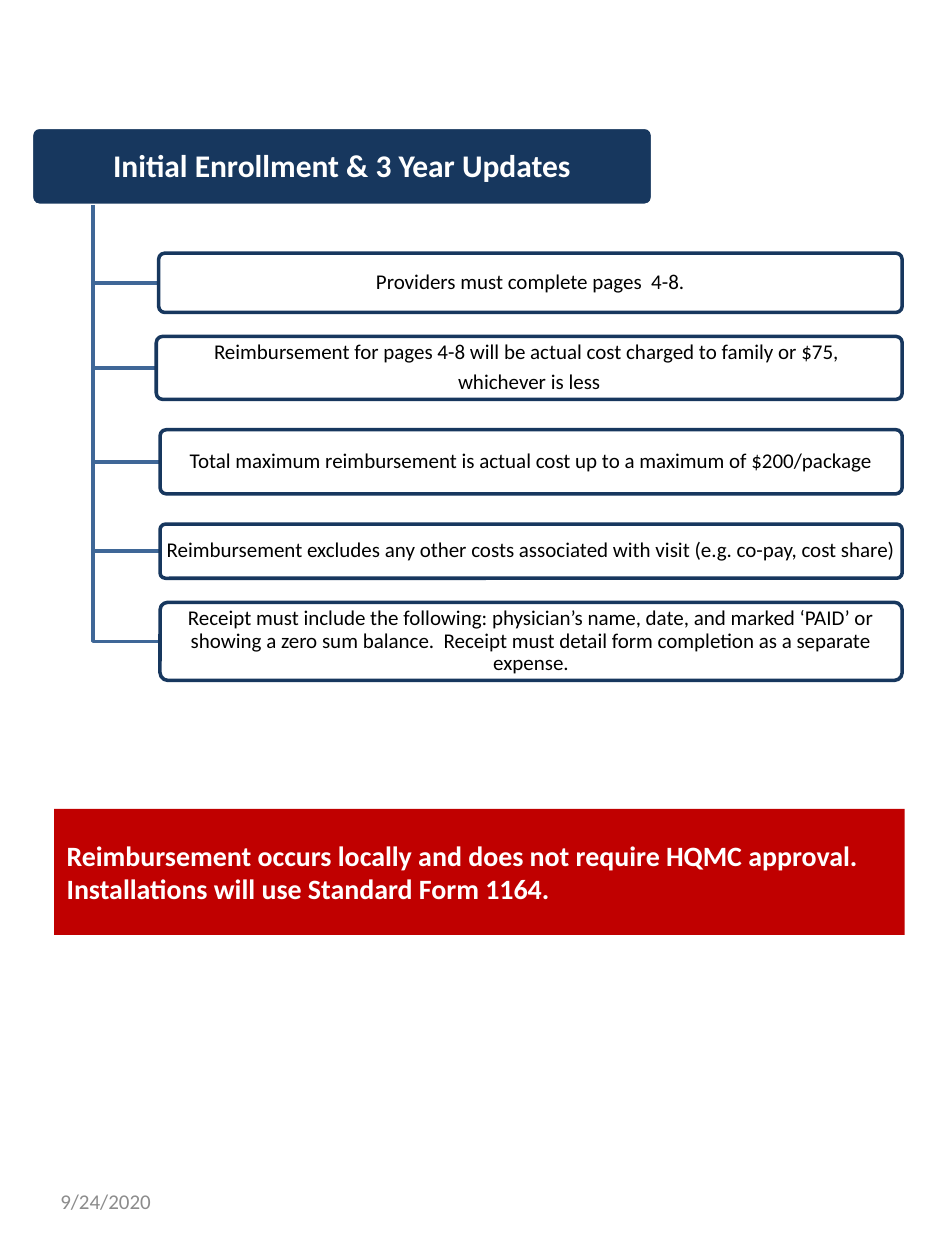
"""Build the enrollment and reimbursement rules slide."""
from dataclasses import dataclass

from pptx import Presentation
from pptx.dml.color import RGBColor
from pptx.enum.shapes import MSO_SHAPE as Preset
from pptx.enum.text import MSO_ANCHOR as Anchor, PP_ALIGN as Align
from pptx.util import Inches, Pt

FONT = "Calibri"
NAVY, STEEL, RED = "17375E", "3F6797", "C00000"
WHITE, BLACK, GRAY = "FFFFFF", "000000", "8C8C8C"
TRUNK_LEFT, TRUNK_TOP = 0.74, 1.63
RULES_RIGHT = 7.16


@dataclass
class Rule:
    left: float
    top: float
    height: float
    lines: tuple[str, ...]


RULES = [
    Rule(1.26, 2.01, 0.47, ("Providers must complete pages  4-8.",)),
    Rule(1.24, 2.67, 0.5, (
        "Reimbursement for pages 4-8 will be actual cost charged to family or $75, ",
        "whichever is less")),
    Rule(1.27, 3.41, 0.51, (
        "Total maximum reimbursement is actual cost up to a maximum of $200/package",)),
    Rule(1.27, 4.16, 0.43, (
        "Reimbursement excludes any other costs associated with visit "
        "(e.g. co-pay, cost share)",)),
    Rule(1.27, 4.78, 0.62, (
        "Receipt must include the following: physician’s name, date, and marked ‘PAID’ "
        "or showing a zero sum balance.  Receipt must detail form completion as a "
        "separate expense.",)),
]


def color(value: str) -> RGBColor:
    return RGBColor.from_string(value)


def write(shape, lines: tuple[str, ...], size: float, text_color: str,
          bold: bool = False, align=Align.LEFT, margin: float = 0.1,
          line_spacing: float = 1.0, space_after: float = 0) -> None:
    frame = shape.text_frame
    frame.word_wrap = True
    frame.vertical_anchor = Anchor.MIDDLE
    frame.margin_left = frame.margin_right = Inches(margin)
    frame.margin_top = frame.margin_bottom = Inches(margin / 2)
    frame.text = "\n".join(lines)
    for paragraph in frame.paragraphs:
        paragraph.alignment = align
        paragraph.line_spacing = line_spacing
        paragraph.space_before = Pt(0)
        paragraph.space_after = Pt(space_after)
        font = paragraph.font
        font.name, font.size, font.bold = FONT, Pt(size), bold
        font.color.rgb = color(text_color)


def add_box(slide, preset, left: float, top: float, width: float, height: float,
            fill: str, line: str | None = None):
    shape = slide.shapes.add_shape(
        preset, Inches(left), Inches(top), Inches(width), Inches(height))
    shape.shadow.inherit = False
    shape.fill.solid()
    shape.fill.fore_color.rgb = color(fill)
    if preset == Preset.ROUNDED_RECTANGLE:
        shape.adjustments[0] = 0.1
    if line:
        shape.line.color.rgb = color(line)
        shape.line.width = Pt(2)
    else:
        shape.line.fill.background()
    return shape


def add_branch(slide, rule: Rule) -> None:
    middle = Inches(rule.top + rule.height / 2)
    trunk = Inches(TRUNK_LEFT)
    builder = slide.shapes.build_freeform(trunk, Inches(TRUNK_TOP))
    builder.add_line_segments([(trunk, middle), (Inches(rule.left), middle)], close=False)
    branch = builder.convert_to_shape()
    branch.shadow.inherit = False
    branch.fill.background()
    branch.line.color.rgb = color(STEEL)
    branch.line.width = Pt(2)


def add_rule(slide, rule: Rule) -> None:
    add_branch(slide, rule)
    box = add_box(slide, Preset.ROUNDED_RECTANGLE, rule.left, rule.top,
                  RULES_RIGHT - rule.left, rule.height, WHITE, NAVY)
    write(box, rule.lines, 12, BLACK, align=Align.CENTER, margin=0.04,
          line_spacing=0.9, space_after=4.2)


def add_heading(slide) -> None:
    add_box(slide, Preset.ROUNDED_RECTANGLE, 0.25, 1.01, 4.93, 0.62, NAVY, WHITE)
    title = slide.shapes.title
    title.left, title.top = Inches(0.27), Inches(1.03)
    title.width, title.height = Inches(4.89), Inches(0.59)
    write(title, ("Initial Enrollment & 3 Year Updates",), 18, WHITE, bold=True,
          align=Align.CENTER, margin=0.04, line_spacing=0.9)
    slide.shapes._spTree.append(title._element)


def main() -> None:
    presentation = Presentation()
    presentation.slide_width, presentation.slide_height = Inches(7.5), Inches(10)
    slide = presentation.slides.add_slide(presentation.slide_layouts[5])

    add_heading(slide)
    for rule in RULES:
        add_rule(slide, rule)

    notice = add_box(slide, Preset.RECTANGLE, 0.43, 6.42, 6.75, 1, RED)
    write(notice, ("Reimbursement occurs locally and does not require HQMC approval.  "
                   "Installations will use Standard Form 1164.",), 16, WHITE, bold=True)

    date = slide.shapes.add_textbox(Inches(0.38), Inches(9.27), Inches(1.75), Inches(0.53))
    write(date, ("9/24/2020",), 12, GRAY)

    presentation.save("out.pptx")


if __name__ == "__main__":
    main()
